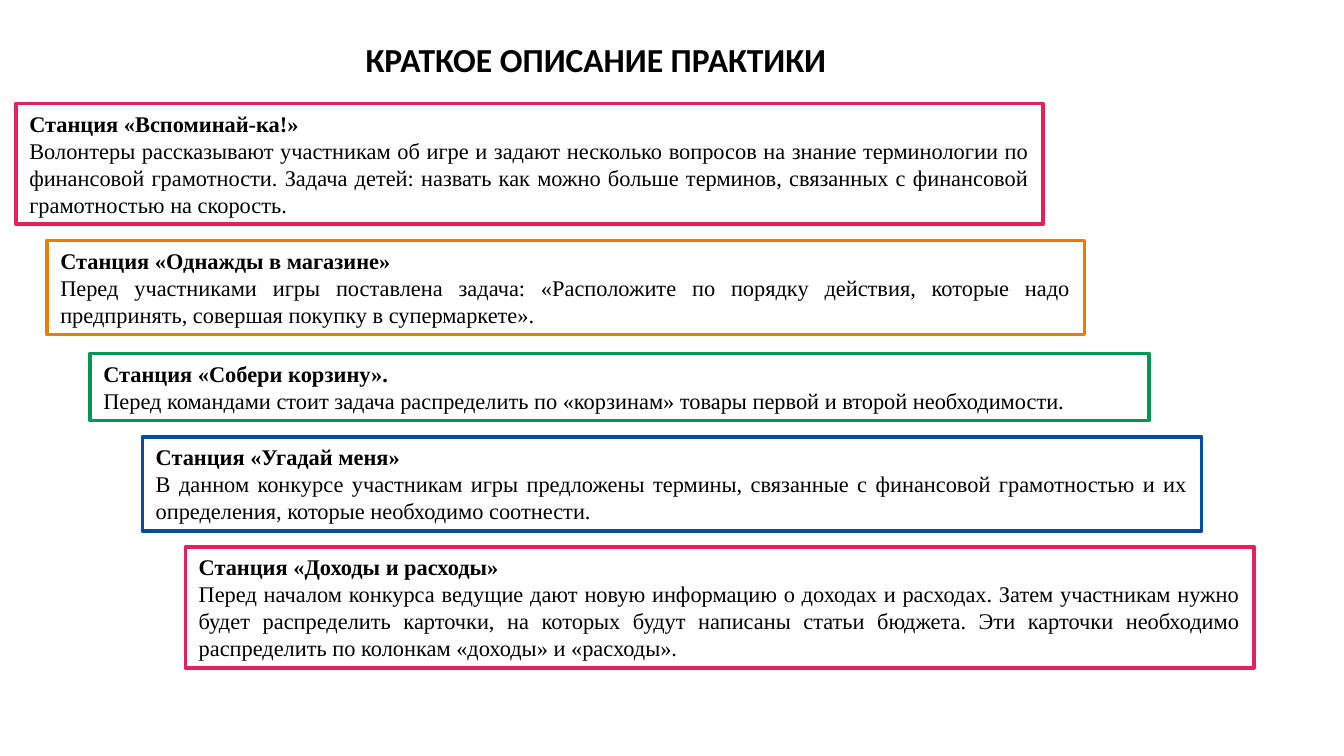
from dataclasses import dataclass

from pptx import Presentation
from pptx.dml.color import RGBColor
from pptx.enum.shapes import MSO_SHAPE
from pptx.enum.text import MSO_ANCHOR, PP_ALIGN
from pptx.util import Inches, Pt

RECTANGLE = MSO_SHAPE.RECTANGLE
TOP = MSO_ANCHOR.TOP
LEFT, JUSTIFY = PP_ALIGN.LEFT, PP_ALIGN.JUSTIFY
BLANK_LAYOUT = 6
GRID = Inches(0.1)
COLUMNS, ROWS = 100, 56.25


@dataclass(frozen=True)
class Theme:
    ink: str = "000000"
    paper: str = "FFFFFF"
    pink: str = "E5205A"
    orange: str = "ED7D00"
    green: str = "009655"
    blue: str = "004E9E"
    heading_font: str = "Calibri"
    body_font: str = "Times New Roman"
    heading_size: int = 18
    body_size: int = 12
    border: int = 2


THEME = Theme()

HEADING = "КРАТКОЕ ОПИСАНИЕ ПРАКТИКИ"
HEADING_BOX = (27.2, 2.9, 47.5, 4.7)

STATIONS = [
    (1.2, 7.7, 76.4, 3, THEME.pink, "Станция «Вспоминай-ка!»",
     "Волонтеры рассказывают участникам об игре и задают несколько вопросов на знание "
     "терминологии по финансовой грамотности. Задача детей: назвать как можно больше "
     "терминов, связанных с финансовой грамотностью на скорость."),
    (3.5, 17.9, 77.2, 2, THEME.orange, "Станция «Однажды в магазине»",
     "Перед участниками игры поставлена задача: «Расположите по порядку действия, "
     "которые надо предпринять, совершая покупку в супермаркете»."),
    (6.7, 26.3, 78.8, 1, THEME.green, "Станция «Собери корзину».",
     "Перед командами стоит задача распределить по «корзинам» товары первой и второй "
     "необходимости."),
    (10.6, 32.5, 78.8, 2, THEME.blue, "Станция «Угадай меня»",
     "В данном конкурсе участникам игры предложены термины, связанные с финансовой "
     "грамотностью и их определения, которые необходимо соотнести."),
    (13.8, 40.7, 79.5, 3, THEME.pink, "Станция «Доходы и расходы»",
     "Перед началом конкурса ведущие дают новую информацию о доходах и расходах. Затем "
     "участникам нужно будет распределить карточки, на которых будут написаны статьи "
     "бюджета. Эти карточки необходимо распределить по колонкам «доходы» и «расходы»."),
]


def cells(*counts):
    return [round(count * GRID) for count in counts]


def write(paragraph, text, font_name, size, bold, alignment):
    paragraph.text = text
    paragraph.alignment = alignment
    font = paragraph.runs[0].font
    font.name = font_name
    font.size = Pt(size)
    font.bold = bold
    font.color.rgb = RGBColor.from_string(THEME.ink)


def add_heading(slide, box):
    frame = slide.shapes.add_textbox(*cells(*box)).text_frame
    frame.word_wrap = True
    frame.vertical_anchor = TOP
    frame.margin_left = frame.margin_right = 0
    frame.margin_top = frame.margin_bottom = 0
    write(frame.paragraphs[0], HEADING, THEME.heading_font, THEME.heading_size, True, LEFT)


def add_station(slide, box, color, name, task):
    station = slide.shapes.add_shape(RECTANGLE, *cells(*box))
    station.shadow.inherit = False
    station.fill.solid()
    station.fill.fore_color.rgb = RGBColor.from_string(THEME.paper)
    station.line.color.rgb = RGBColor.from_string(color)
    station.line.width = Pt(THEME.border)
    frame = station.text_frame
    frame.word_wrap = True
    frame.vertical_anchor = TOP
    write(frame.paragraphs[0], name, THEME.body_font, THEME.body_size, True, LEFT)
    write(frame.add_paragraph(), task, THEME.body_font, THEME.body_size, False, JUSTIFY)


def main():
    presentation = Presentation()
    presentation.slide_width, presentation.slide_height = cells(COLUMNS, ROWS)
    slide = presentation.slides.add_slide(presentation.slide_layouts[BLANK_LAYOUT])
    add_heading(slide, HEADING_BOX)
    for left, top, width, task_lines, color, name, task in STATIONS:
        add_station(slide, (left, top, width, 2 * task_lines + 3), color, name, task)
    presentation.save("out.pptx")


if __name__ == "__main__":
    main()
